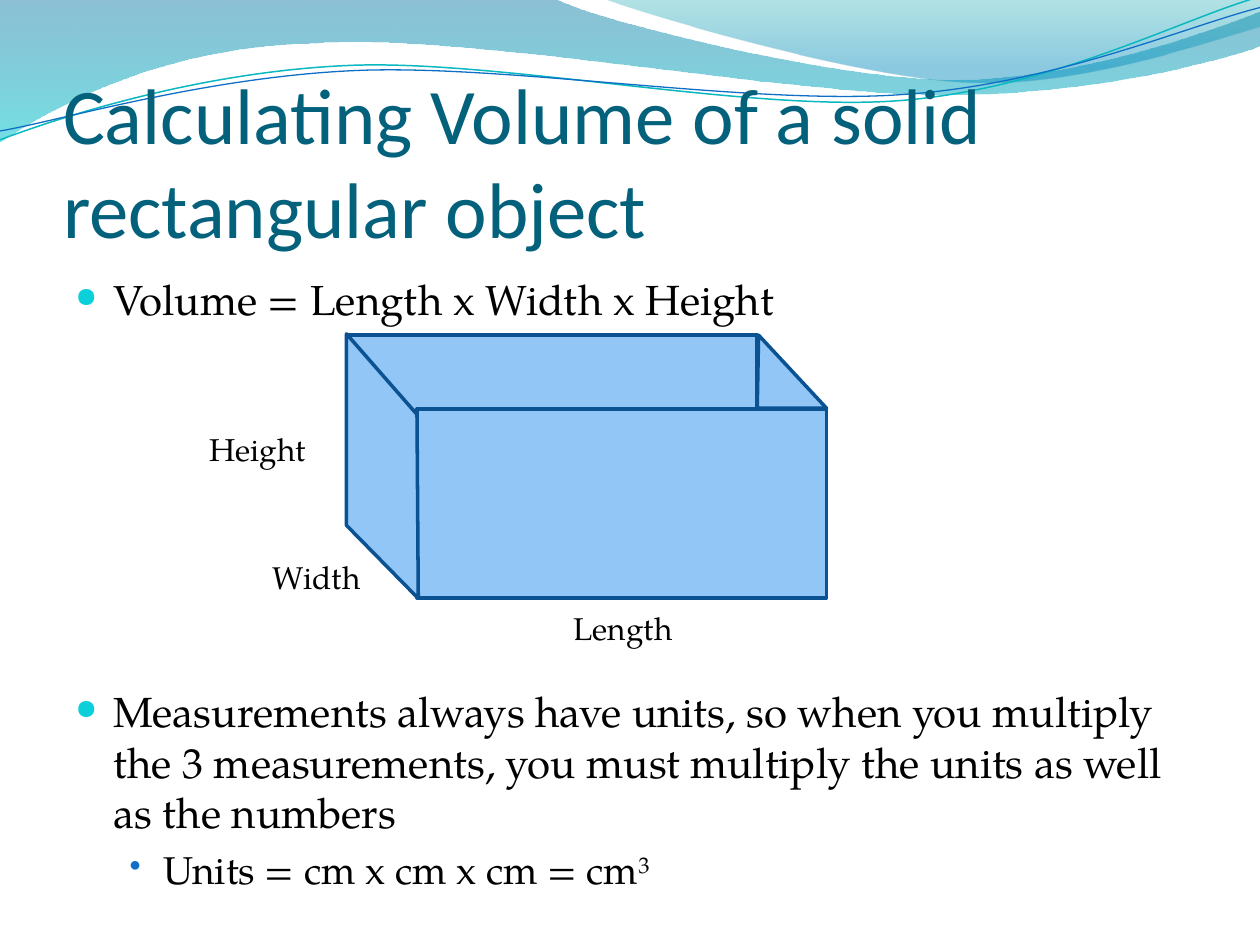
from lxml import etree
from pptx import Presentation
from pptx import util as u
from pptx.dml.color import RGBColor
from pptx.enum import shapes, text
from pptx.oxml.ns import qn

COLORS = {
    "title": "04617B", "text": "000000", "bullet": "0BD0D9", "sub_bullet": "0F6FC6",
    "face": "91C6F7", "edge": "0B5292", "teal_line": "0AB8BF", "blue_line": "0F6FC6",
    "wave_top": "0074A1", "wave_bottom": "00C6CF", "crest_top": "00A1A9", "crest_bottom": "008BBF",
}
SERIF = "TeX Gyre Pagella"

presentation = Presentation()
presentation.slide_width, presentation.slide_height = u.Inches(10), u.Inches(7.5)
column = presentation.slide_width / 100
row = presentation.slide_height / 75
slide = presentation.slides.add_slide(presentation.slide_layouts[5])


def write(paragraph, content, size, color="text", font=SERIF, before=0,
          bullet=None, bullet_color="bullet", bullet_size=66, margin=0, hanging=0, raised=None):
    paragraph.alignment = text.PP_ALIGN.LEFT
    paragraph.space_before = u.Pt(before)
    for part in filter(None, (content, raised)):
        run = paragraph.add_run()
        run.text = part
        run.font.name, run.font.size = font, u.Pt(size)
        run.font.color.rgb = RGBColor.from_string(COLORS[color])
    if raised:
        run.font._element.set("baseline", "30000")
    if bullet:
        properties = paragraph._p.get_or_add_pPr()
        properties.set("marL", str(round(margin * column)))
        properties.set("indent", str(round(-hanging * column)))
        holder = etree.SubElement(properties, qn("a:buClr"))
        etree.SubElement(holder, qn("a:srgbClr"), val=COLORS[bullet_color])
        etree.SubElement(properties, qn("a:buSzPct"), val=str(bullet_size * 1000))
        etree.SubElement(properties, qn("a:buChar"), char=bullet)


def draw_outline(parent, segments, close=True):
    scaled = [[(round(x * column), round(y * row)) for x, y in zip(segment[::2], segment[1::2])]
              for segment in segments]
    builder = parent.build_freeform(*scaled[0][0])
    builder.add_line_segments([points[-1] for points in scaled[1:]], close=close)
    shape = builder.convert_to_shape()
    shape.shadow.inherit = False
    lines = list(shape._element.iter(qn("a:lnTo")))
    for line, points in zip(lines, scaled[1:]):
        if len(points) == 3:
            line.tag_name = None
            curve = etree.Element(qn("a:cubicBezTo"))
            for x, y in points:
                etree.SubElement(curve, qn("a:pt"), x=str(x - shape.left), y=str(y - shape.top))
            line.getparent().replace(line, curve)
    return shape


bands = [
    ([(0, 0), (44, -0.1), (47.6, 1.7, 66.4, 6.3, 75.8, 6.3), (85.3, 6.3, 95.8, 2.6, 100, 0.9),
      (100.1, 3.6), (98.3, 4.4, 87, 7.6, 74.6, 7.5), (62.2, 7.5, 38.2, 2.8, 25.7, 3.4),
      (12.9, 3.6, 4.6, 8.3, -0.1, 11.3)],
     [(0, "wave_top", 45), (1, "wave_bottom", 55)]),
    ([(47.9, -0.1), (50.9, 1.1, 68.2, 6.2, 76.9, 6.5), (85.6, 6.9, 96.1, 3.2, 100, 2.1), (100, 0)],
     [(0, "crest_top", 30), (0.8, "crest_bottom", 45)]),
]
for segments, stops in bands:
    shape = draw_outline(slide.shapes, segments)
    shape.line.fill.background()
    shape.fill.gradient()
    shape.fill.gradient_angle = 270
    for stop, (position, color, opacity) in zip(shape.fill.gradient_stops, stops):
        stop.position = position
        stop.color.rgb = RGBColor.from_string(COLORS[color])
    for element, (position, color, opacity) in zip(shape._element.spPr.iter(qn("a:srgbClr")), stops):
        etree.SubElement(element, qn("a:alpha"), val=str(opacity * 1000))

ripples = [
    ([(0, 11.1), (4.8, 9.3, 15.8, 5.7, 27.7, 5.2), (39.5, 4.7, 59.3, 8.9, 71.3, 8),
      (83.3, 7.1, 93.8, 1.5, 99.8, -0.2)], "teal_line", 0.85),
    ([(0, 10.4), (4.7, 9.6, 16.4, 6.1, 28.3, 5.6), (40.3, 5.1, 59.7, 8.4, 71.7, 7.5),
      (83.6, 6.7, 94.1, 2.1, 100, 0.6)], "blue_line", 0.75),
]
ripple_group = slide.shapes.add_group_shape()
for segments, color, width in ripples:
    shape = draw_outline(ripple_group.shapes, segments, close=False)
    shape.fill.background()
    shape.line.color.rgb = RGBColor.from_string(COLORS[color])
    shape.line.width = u.Pt(width)

title = slide.shapes.title
slide.shapes._spTree.append(title._element)
title.left, title.top = round(5 * column), round(7.7 * row)
title.width, title.height = round(90 * column), round(12.5 * row)
frame = title.text_frame
frame.word_wrap = True
frame.auto_size = text.MSO_AUTO_SIZE.NONE
frame.vertical_anchor = text.MSO_ANCHOR.BOTTOM
frame.margin_left = frame.margin_right = frame.margin_bottom = 0
write(frame.paragraphs[0], "Calculating Volume of a solid rectangular object", 45,
      color="title", font="Calibri")

body = slide.shapes.add_textbox(*map(round, (5 * column, 21.2 * row, 90 * column, 48 * row)))
frame = body.text_frame
frame.word_wrap = True
main_point = dict(size=24, bullet="●", margin=3, hanging=3)
write(frame.paragraphs[0], "Volume = Length x Width x Height", before=4.5, **main_point)
write(frame.add_paragraph(),
      "Measurements always have units, so when you multiply the 3 measurements, "
      "you must multiply the units as well as the numbers", before=207, **main_point)
write(frame.add_paragraph(), "Units = cm x cm x cm = cm", 22.2, before=5, bullet="•",
      bullet_color="sub_bullet", bullet_size=85, margin=7, hanging=2.7, raised="3")

diagram = slide.shapes.add_group_shape().shapes
faces = [
    diagram.add_shape(shapes.MSO_SHAPE.RECTANGLE,
                      *map(round, (left * column, top * row, 32.5 * column, 15 * row)))
    for left, top in [(27.6, 26.6), (33.1, 32.45)]
]
faces.append(draw_outline(diagram, [(27.5, 41.7), (27.5, 26.5), (33.1, 32.9), (33.2, 47.5)]))
faces.append(diagram.add_shape(shapes.MSO_SHAPE.ISOSCELES_TRIANGLE,
                               *map(round, (60.1 * column, 26.6 * row, 5.5 * column, 5.8 * row))))
faces[-1].adjustments[0] = 0.02
for face in faces:
    face.shadow.inherit = False
    face.fill.solid()
    face.fill.fore_color.rgb = RGBColor.from_string(COLORS["face"])
    face.line.color.rgb = RGBColor.from_string(COLORS["edge"])
    face.line.width = u.Pt(2)

for label, left, top in [("Length", 44.55, 47.85), ("Width", 20.65, 43.8), ("Height", 15.65, 33.65)]:
    box = diagram.add_textbox(*map(round, (left * column, top * row, 10 * column, 4 * row)))
    box.text_frame.word_wrap = True
    write(box.text_frame.paragraphs[0], label, 18)

presentation.save("out.pptx")
